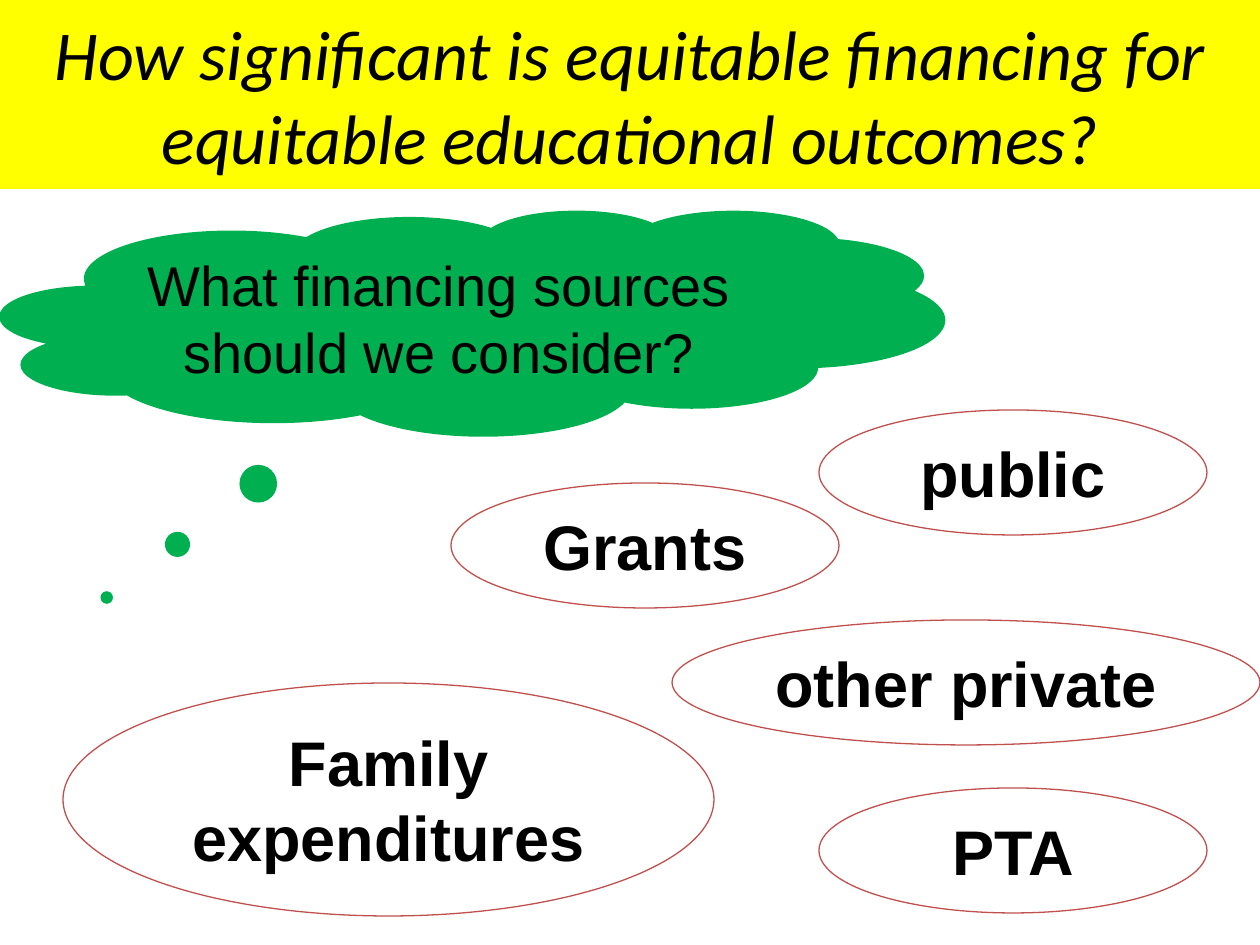
from dataclasses import dataclass

from pptx import Presentation
from pptx.dml.color import RGBColor
from pptx.enum.shapes import MSO_SHAPE
from pptx.enum.text import MSO_ANCHOR, MSO_AUTO_SIZE, PP_ALIGN
from pptx.slide import Slide
from pptx.util import Emu, Pt

COLORS = {"banner": "FFFF00", "cloud": "00B050", "outline": "C0504D", "text": "000000"}
EMU_PER_PX = 914400 / 126
ELLIPSE_HEIGHT = 125
SOURCES = [
    ("Grants", 451, 483, 388, ELLIPSE_HEIGHT),
    ("other private", 672, 620, 588, ELLIPSE_HEIGHT),
    ("PTA", 819, 788, 388, ELLIPSE_HEIGHT),
    ("Family expenditures", 63, 683, 651, 233),
    ("public", 819, 410, 388, ELLIPSE_HEIGHT),
]


def px(length):
    return Emu(round(length * EMU_PER_PX))


def color(name):
    return RGBColor.from_string(COLORS[name])


@dataclass
class FinancingPage:
    """Draws the banner, question cloud and source ellipses on one slide."""

    page: Slide
    body_font: str = "Arial"
    title_font: str = "Calibri"

    def shape(self, kind, bounds, fill=None, line=None):
        shape = self.page.shapes.add_shape(kind, *map(px, bounds))
        shape.shadow.inherit = False
        if fill:
            shape.fill.solid()
            shape.fill.fore_color.rgb = color(fill)
        else:
            shape.fill.background()
        if line:
            shape.line.color.rgb = color(line)
            shape.line.width = Pt(0.75)
        else:
            shape.line.fill.background()
        return shape

    def label(self, shape, text, size, font, anchor, bold=False, italic=False):
        frame = shape.text_frame
        frame.text = text
        frame.word_wrap = True
        frame.vertical_anchor = anchor
        para = frame.paragraphs[0]
        para.alignment = PP_ALIGN.CENTER
        for span in para.runs:
            span.font.name = font
            span.font.size = Pt(size)
            span.font.bold = bold
            span.font.italic = italic
            span.font.color.rgb = color("text")
        return frame

    def banner(self, text, *bounds):
        box = self.shape(MSO_SHAPE.RECTANGLE, bounds, fill="banner")
        self.label(box, text, 40, self.title_font, MSO_ANCHOR.MIDDLE, italic=True)

    def cloud(self, text, *bounds):
        cloud = self.shape(MSO_SHAPE.CLOUD_CALLOUT, bounds, fill="cloud")
        cloud.adjustments[0] = -0.387
        cloud.adjustments[1] = 1.215
        frame = self.label(cloud, text, 32, self.body_font, MSO_ANCHOR.MIDDLE)
        frame.margin_left = frame.margin_right = 0
        frame.auto_size = MSO_AUTO_SIZE.SHAPE_TO_FIT_TEXT

    def source(self, text, *bounds):
        ellipse = self.shape(MSO_SHAPE.OVAL, bounds, line="outline")
        frame = self.label(ellipse, text, 36, self.body_font, MSO_ANCHOR.TOP, bold=True)
        frame.auto_size = MSO_AUTO_SIZE.SHAPE_TO_FIT_TEXT


def main():
    deck = Presentation()
    deck.slide_width, deck.slide_height = px(1260), px(945)
    page = FinancingPage(deck.slides.add_slide(deck.slide_layouts[6]))
    page.banner(
        "How significant is equitable financing for equitable educational outcomes?",
        0, 0, 1260, 189,
    )
    page.cloud("What financing sources should we consider?", 0, 210, 945, 226)
    for source in SOURCES:
        page.source(*source)
    deck.save("out.pptx")


if __name__ == "__main__":
    main()
